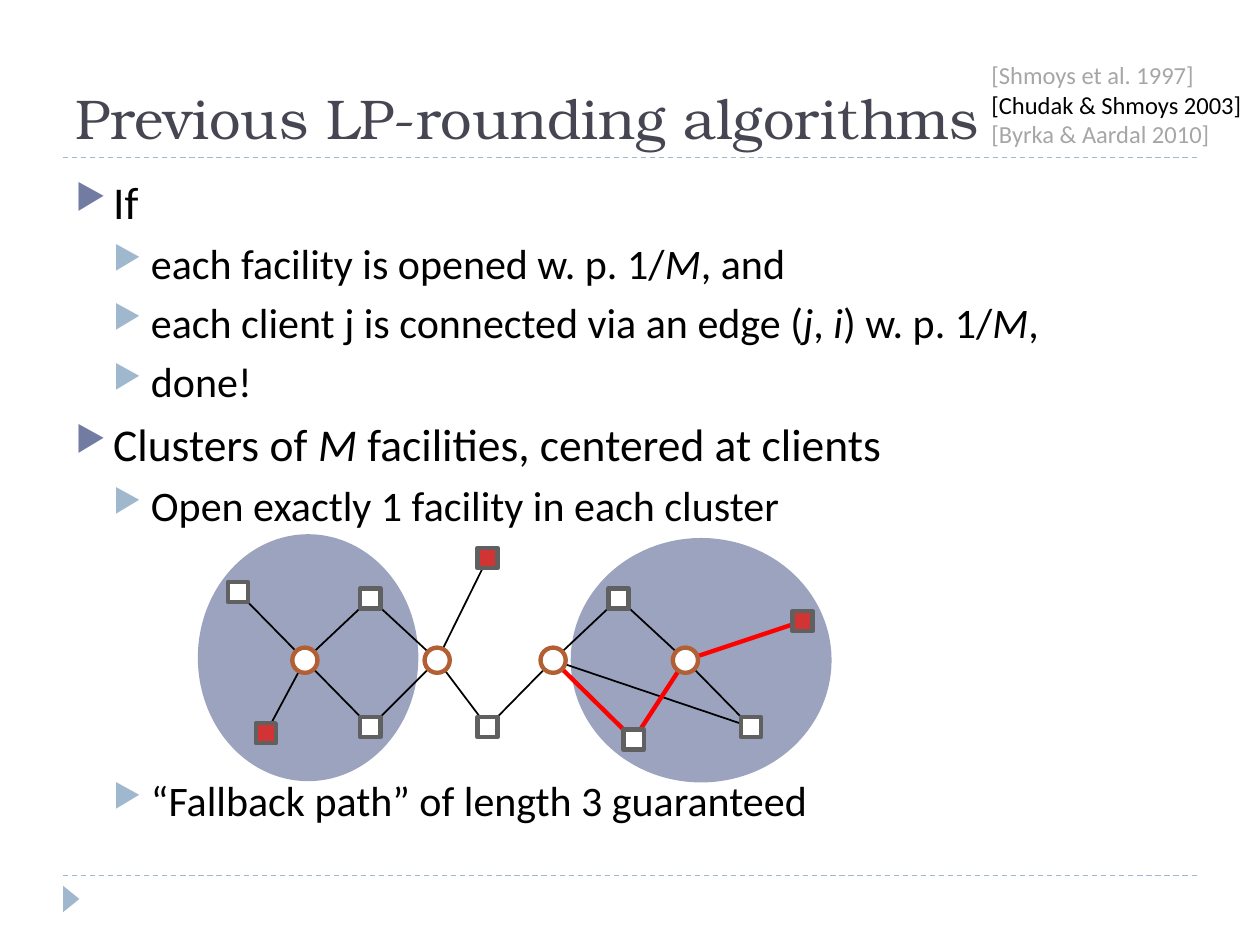
from dataclasses import dataclass

from lxml.etree import SubElement
from pptx import Presentation
from pptx.dml.color import RGBColor
from pptx.enum.dml import MSO_LINE
from pptx.enum.shapes import MSO_CONNECTOR as Connector, MSO_SHAPE as Shape
from pptx.enum.text import MSO_ANCHOR, MSO_AUTO_SIZE, PP_ALIGN
from pptx.oxml.ns import qn
from pptx.util import Inches, Pt


@dataclass(frozen=True)
class Theme:
    heading_font: str = "TeX Gyre Bonum"
    body_font: str = "Calibri"
    heading: str = "464653"
    ink: str = "000000"
    muted: str = "A6A6A6"
    rule: str = "9FB8CD"
    accent: str = "727CA3"
    paper: str = "FFFFFF"
    opened: str = "D23333"
    facility_edge: str = "606060"
    client_edge: str = "B26033"
    fallback: str = "FF0000"
    title_size: int = 32
    level_sizes: tuple = (26, 24)
    citation_size: int = 14


theme = Theme()
deck = Presentation()
deck.slide_width, deck.slide_height = Inches(10), Inches(7.5)
page = deck.slides.add_slide(deck.slide_layouts[5])


def add_figure(kind, left, top, width, height, fill, outline=None):
    figure = page.shapes.add_shape(
        kind, Inches(left), Inches(top), Inches(width), Inches(height))
    figure.shadow.inherit = False
    figure.fill.solid()
    figure.fill.fore_color.rgb = RGBColor.from_string(fill)
    if outline:
        figure.line.color.rgb = RGBColor.from_string(outline)
        figure.line.width = Pt(2.5)
    else:
        figure.line.fill.background()
    return figure


def add_line(start, end, color, width):
    line = page.shapes.add_connector(
        Connector.STRAIGHT, *(Inches(value) for value in (*start, *end)))
    line.line.color.rgb = RGBColor.from_string(color)
    line.line.width = Pt(width)
    SubElement(line._element.spPr, qn("a:effectLst"))
    return line


# Page frame
for rule_y in (1.25, 6.95):
    add_line((0.5, rule_y), (9.5, rule_y), theme.rule, 0.75).line.dash_style = MSO_LINE.DASH
add_figure(Shape.ISOSCELES_TRIANGLE, 0.46, 7.07, 0.21, 0.13, theme.rule).rotation = 90

# Title
title = page.shapes.title
title.left, title.top, title.width, title.height = (
    Inches(value) for value in (0.5, 0.17, 9, 1.08))
title.text_frame.auto_size = MSO_AUTO_SIZE.NONE
title.text_frame.vertical_anchor = MSO_ANCHOR.BOTTOM
para = title.text_frame.paragraphs[0]
para.alignment = PP_ALIGN.LEFT
span = para.add_run()
span.text = "Previous LP-rounding algorithms"
span.font.name = theme.heading_font
span.font.size = Pt(theme.title_size)
span.font.color.rgb = RGBColor.from_string(theme.heading)

# Citations
box = page.shapes.add_textbox(Inches(7.77), Inches(0.43), Inches(2.23), Inches(0.81))
box.text_frame.word_wrap = False
citations = [
    ("[Shmoys et al. 1997]", theme.muted),
    ("[Chudak & Shmoys 2003]", theme.ink),
    ("[Byrka & Aardal 2010]", theme.muted),
]
for index, (citation, color) in enumerate(citations):
    para = box.text_frame.add_paragraph() if index else box.text_frame.paragraphs[0]
    span = para.add_run()
    span.text = citation
    span.font.name = theme.body_font
    span.font.size = Pt(theme.citation_size)
    span.font.color.rgb = RGBColor.from_string(color)

# Clusters, behind the text and the graph
for left, top, width, height in ((1.57, 4.24, 1.75, 1.96), (4.53, 4.27, 2.07, 1.94)):
    cluster = add_figure(Shape.OVAL, left, top, width, height, theme.accent)
    color = cluster._element.spPr.find(qn("a:solidFill"))[0]
    SubElement(color, qn("a:alpha"), val="70000")

# Outline: level, space before, and runs that alternate upright and italic
diagram_gap = 140
outline = [
    (0, 6, ["If"]),
    (1, 5, ["each facility is opened w. p. 1/", "M", ", and"]),
    (1, 5, ["each client j is connected via an edge (", "j", ", ", "i",
            ") w. p. 1/", "M", ","]),
    (1, 5, ["done!"]),
    (0, 6, ["Clusters of ", "M", " facilities, centered at clients"]),
    (1, 5, ["Open exactly 1 facility in each cluster"]),
    (1, diagram_gap, ["“Fallback path” of length 3 guaranteed"]),
]
bullet_colors = (theme.accent, theme.rule)
box = page.shapes.add_textbox(Inches(0.5), Inches(1.33), Inches(9), Inches(5.76))
box.text_frame.word_wrap = True
for index, (level, space, words) in enumerate(outline):
    para = box.text_frame.add_paragraph() if index else box.text_frame.paragraphs[0]
    para.level = level
    para.space_before = Pt(space)
    properties = para._p.get_or_add_pPr()
    properties.set("marL", str(Inches(0.3 * (level + 1))))
    properties.set("indent", str(Inches(-0.3)))
    bullet_color = SubElement(properties, qn("a:buClr"))
    SubElement(bullet_color, qn("a:srgbClr"), val=bullet_colors[level])
    SubElement(properties, qn("a:buSzPct"), val="76000")
    SubElement(properties, qn("a:buChar"), char="▶")
    for position, word in enumerate(words):
        span = para.add_run()
        span.text = word
        span.font.name = theme.body_font
        span.font.size = Pt(theme.level_sizes[level])
        span.font.italic = position % 2 == 1
        span.font.color.rgb = RGBColor.from_string(theme.ink)

# Graph: node centres, then the edges from each client to its facilities
clients = [(x, 5.24) for x in (2.42, 3.47, 4.39, 5.44)]
facilities = [
    (1.89, 4.70), (2.11, 5.82), (2.94, 4.75), (2.94, 5.77), (3.87, 4.43),
    (3.87, 5.77), (4.91, 4.75), (5.03, 5.87), (5.96, 5.77), (6.37, 4.93),
]
open_facilities = {1, 4, 9}
neighbours = [(0, 1, 2, 3), (2, 3, 4, 5), (5, 6, 7, 8), (6, 7, 8, 9)]
fallback_path = {(2, 7), (3, 7), (3, 9)}

for client, linked in enumerate(neighbours):
    for facility in linked:
        on_path = (client, facility) in fallback_path
        add_line(clients[client], facilities[facility],
                 theme.fallback if on_path else theme.ink, 2.5 if on_path else 1)

for index, (x, y) in enumerate(facilities):
    fill = theme.opened if index in open_facilities else theme.paper
    add_figure(Shape.RECTANGLE, x - 0.08, y - 0.08, 0.16, 0.16, fill, theme.facility_edge)
for x, y in clients:
    add_figure(Shape.OVAL, x - 0.1, y - 0.1, 0.2, 0.2, theme.paper, theme.client_edge)

deck.save("out.pptx")
